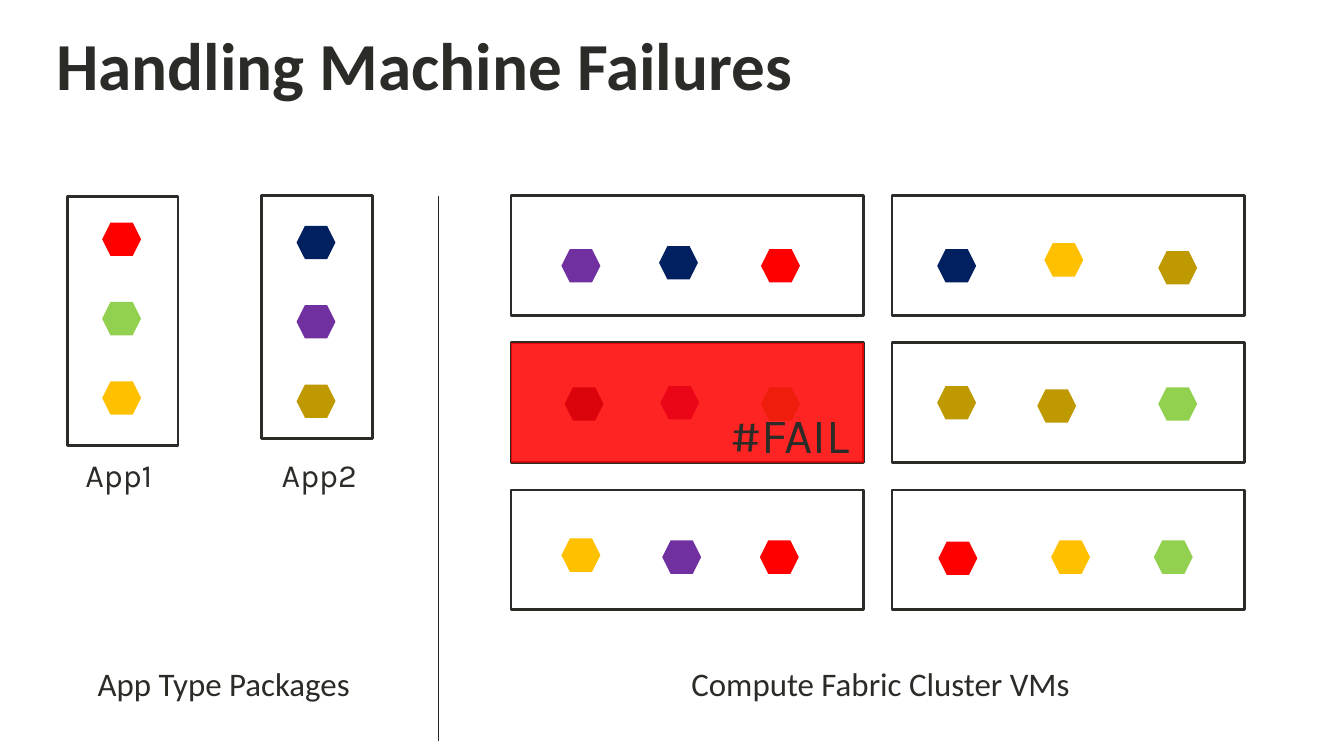
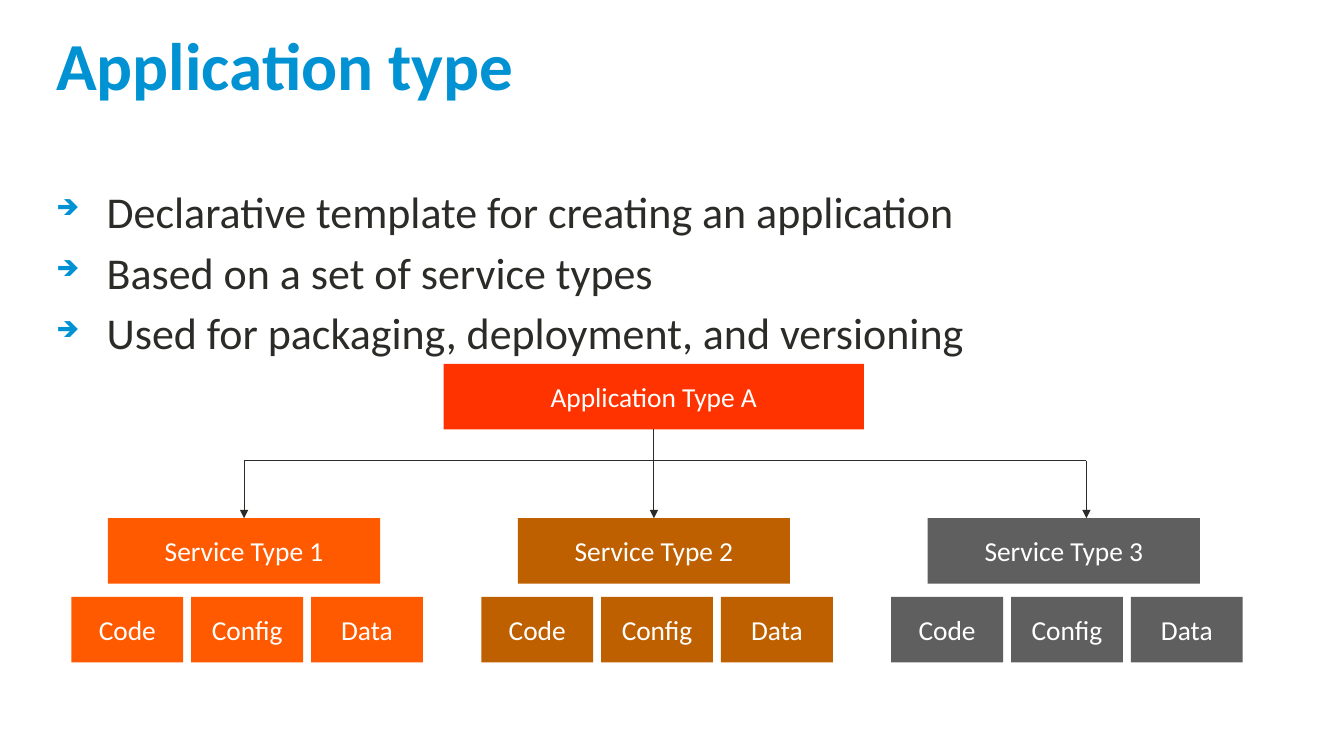
from lxml import etree
from pptx import Presentation, util as u
from pptx.dml.color import RGBColor
from pptx.enum import shapes, text
from pptx.oxml.ns import qn

COLORS = {
    "ink": "2B2C27", "divider": "252521", "white": "FFFFFF", "blue": "0092D3",
    "red": "FF0000", "green": "92D050", "yellow": "FFC000", "navy": "002060",
    "purple": "7030A0", "gold": "BF9900",
    "root": "FF3300", "orange": "FF5A00", "brown": "BF6000", "gray": "5F5F5F",
}
RECT = shapes.MSO_SHAPE.RECTANGLE
HEXAGON = shapes.MSO_SHAPE.HEXAGON
CENTER = text.PP_ALIGN.CENTER
MIDDLE = text.MSO_ANCHOR.MIDDLE

TITLE = {"size": u.Pt(48), "bold": True}
BODY = {"size": u.Pt(31.4)}
NODE = {"size": u.Pt(19.6)}
CAPTION = {"size": u.Pt(23.5)}
APP_LABEL = {"size": u.Pt(23.1), "name": "Karla"}
FAIL_LABEL = {"size": u.Pt(35.3), "name": "Karla"}
LABEL_PARAGRAPH = {"line_spacing": 0.9, "space_after": u.Pt(5.9)}

HEX_W, HEX_H = 0.98, 0.84
VM_W, VM_H = 8.89, 3.02
NODE_H = 1.65


def rgb(name):
    return RGBColor.from_string(COLORS[name])


def set_all(obj, values):
    for name, value in values.items():
        setattr(obj, name, value)


def cm(*lengths):
    return [u.Cm(n) for n in lengths]


def fill_text(tf, line, color, font, paragraph=None, insets=(0.25, 0.13)):
    x, y = cm(*insets)
    set_all(tf, {"word_wrap": True, "margin_left": x, "margin_right": x,
                 "margin_top": y, "margin_bottom": y})
    p = tf.paragraphs[0]
    set_all(p, paragraph or {})
    r = p.add_run()
    r.text = line
    set_all(r.font, {"name": "Calibri", **font})
    r.font.color.rgb = rgb(color)


def add_text(s, box, line, color, font, **options):
    tf = s.shapes.add_textbox(*cm(*box)).text_frame
    fill_text(tf, line, color, font, **options)
    return tf


def add_title(s, line, color):
    tf = add_text(s, (1.17, 0.76, 28.45, 1.7), line, color, TITLE)
    tf.vertical_anchor = MIDDLE


def add_label(s, box, line, font, align=None):
    add_text(s, box, line, "ink", font, insets=(0.5, 0.4),
             paragraph={**LABEL_PARAGRAPH, "alignment": align})


def add_block(s, kind, box, fill, outline=None):
    sp = s.shapes.add_shape(kind, *cm(*box))
    sp.shadow.inherit = False
    sp.fill.solid()
    sp.fill.fore_color.rgb = rgb(fill)
    if outline:
        sp.line.color.rgb = rgb(outline)
        sp.line.width = u.Pt(2)
    else:
        sp.line.fill.background()
    return sp


def add_line(s, x1, y1, x2, y2, color="ink", width=0.75, arrow=False):
    line = s.shapes.add_connector(shapes.MSO_CONNECTOR.STRAIGHT, *cm(x1, y1, x2, y2))
    line.line.color.rgb = rgb(color)
    line.line.width = u.Pt(width)
    if arrow:
        etree.SubElement(line.line._get_or_add_ln(), qn("a:tailEnd"), type="triangle")
    etree.SubElement(line._element.spPr, qn("a:effectLst"))


def add_hexagon(s, x, y, color):
    add_block(s, HEXAGON, (x, y, HEX_W, HEX_H), color)


def add_app(s, box, name, label_x, first_y, colors):
    """Draw a package with its services stacked from first_y at equal steps."""
    x, y, w, _ = box
    add_block(s, RECT, box, "white", "ink")
    for i, color in enumerate(colors):
        add_hexagon(s, x + (w - HEX_W) / 2 - 0.03, y + first_y + 2 * i, color)
    add_label(s, (label_x, 11.18, 3.25, 1.68), name, APP_LABEL)


def add_vm(s, x, y, services):
    add_block(s, RECT, (x, y, VM_W, VM_H), "white", "ink")
    for color, dx, dy in services:
        add_hexagon(s, x + dx, y + dy, color)


def add_failure(s, x, y):
    """Cover a machine with a translucent red block and its label."""
    cover = add_block(s, RECT, (x, y, VM_W, VM_H), "red")
    tint = cover._element.spPr.find(qn("a:solidFill"))[0]
    etree.SubElement(tint, qn("a:alpha"), val="86000")
    add_label(s, (x + 5.03, y + 1.32, 4.67, 2.16), "#FAIL", FAIL_LABEL)


def add_cluster(s, left, top):
    machines = [
        [[("purple", 1.27, 1.35), ("navy", 3.73, 1.27), ("red", 6.3, 1.35)],
         [("navy", 1.14, 1.35), ("yellow", 3.84, 1.2), ("gold", 6.71, 1.4)]],
        [[("navy", 1.35, 1.12), ("purple", 3.76, 1.09), ("green", 6.3, 1.12)],
         [("gold", 1.14, 1.09), ("gold", 3.66, 1.17), ("green", 6.71, 1.12)]],
        [[("yellow", 1.27, 1.22), ("purple", 3.81, 1.27), ("red", 6.27, 1.27)],
         [("red", 1.17, 1.3), ("yellow", 4.01, 1.27), ("green", 6.6, 1.27)]],
    ]
    col_step, row_step = 9.6, 3.71
    for row, pair in enumerate(machines):
        for col, services in enumerate(pair):
            add_vm(s, left + col * col_step, top + row * row_step, services)
    add_failure(s, left, top + row_step)


def machine_failures(s):
    add_title(s, "Handling Machine Failures", "ink")
    add_app(s, (1.7, 4.95, 2.79, 6.27), "App1", 1.65, 0.66, ["red", "green", "yellow"])
    add_app(s, (6.6, 4.93, 2.79, 6.12), "App2", 6.6, 0.76, ["navy", "purple", "gold"])
    add_line(s, 11.05, 4.93, 11.05, 18.67, "divider", 1)
    add_cluster(s, 12.88, 4.93)
    add_label(s, (0.74, 16.43, 9.8, 1.7), "App Type Packages", CAPTION, CENTER)
    add_label(s, (11.91, 16.43, 20.57, 1.7), "Compute Fabric Cluster VMs", CAPTION, CENTER)


def add_bullets(s, box, lines):
    tf = s.shapes.add_textbox(*cm(*box)).text_frame
    tf.word_wrap = True
    for i, line in enumerate(lines):
        p = tf.paragraphs[0] if i == 0 else tf.add_paragraph()
        pPr = p._p.get_or_add_pPr()
        set_indent = {"marL": u.Cm(1.27), "indent": -u.Cm(1.27)}
        for name, value in set_indent.items():
            pPr.set(name, str(int(value)))
        color = etree.SubElement(pPr, qn("a:buClr"))
        etree.SubElement(color, qn("a:srgbClr"), val=COLORS["blue"])
        etree.SubElement(pPr, qn("a:buSzPct"), val="50000")
        etree.SubElement(pPr, qn("a:buChar"), char="➔")
        if i:
            p.space_before = u.Pt(5.7)
        r = p.add_run()
        r.text = line
        set_all(r.font, {"name": "Calibri", **BODY})
        r.font.color.rgb = rgb("ink")


def add_node(s, x, y, w, line, color):
    sp = add_block(s, RECT, (x, y, w, NODE_H), color)
    fill_text(sp.text_frame, line, "white", NODE, {"alignment": CENTER}, (0, 0.13))
    sp.text_frame.vertical_anchor = MIDDLE


def add_service(s, x, y, name, color):
    """Draw a service type with its three parts below."""
    add_node(s, x, y, 6.86, name, color)
    for i, part in enumerate(["Code", "Config", "Data"]):
        add_node(s, x - 0.92 + 3.02 * i, y + 1.98, 2.82, part, color)


def add_type_tree(s, left, top):
    branch_y, service_y = top + 2.44, top + 3.89
    stems = [left + 3.43, left + 13.76, left + 24.66]
    add_node(s, left + 8.46, top, 10.59, "Application Type A", "root")
    for i, color in enumerate(["orange", "brown", "gray"]):
        add_service(s, left + 10.33 * i, service_y, f"Service Type {i + 1}", color)
    add_line(s, stems[0], branch_y, stems[-1], branch_y)
    add_line(s, stems[1], top + NODE_H, stems[1], branch_y)
    for x in stems:
        add_line(s, x, branch_y, x, service_y, arrow=True)


def application_type(s):
    add_title(s, "Application type", "blue")
    add_bullets(s, (1.17, 4.52, 28.45, 12.5), [
        "Declarative template for creating an application",
        "Based on a set of service types",
        "Used for packaging, deployment, and versioning",
    ])
    add_type_tree(s, 2.72, 9.17)


def main():
    prs = Presentation()
    set_all(prs, {"slide_width": u.Cm(33.87), "slide_height": u.Cm(19.05)})
    for build in (machine_failures, application_type):
        build(prs.slides.add_slide(prs.slide_layouts[6]))
    prs.save("out.pptx")


if __name__ == "__main__":
    main()
